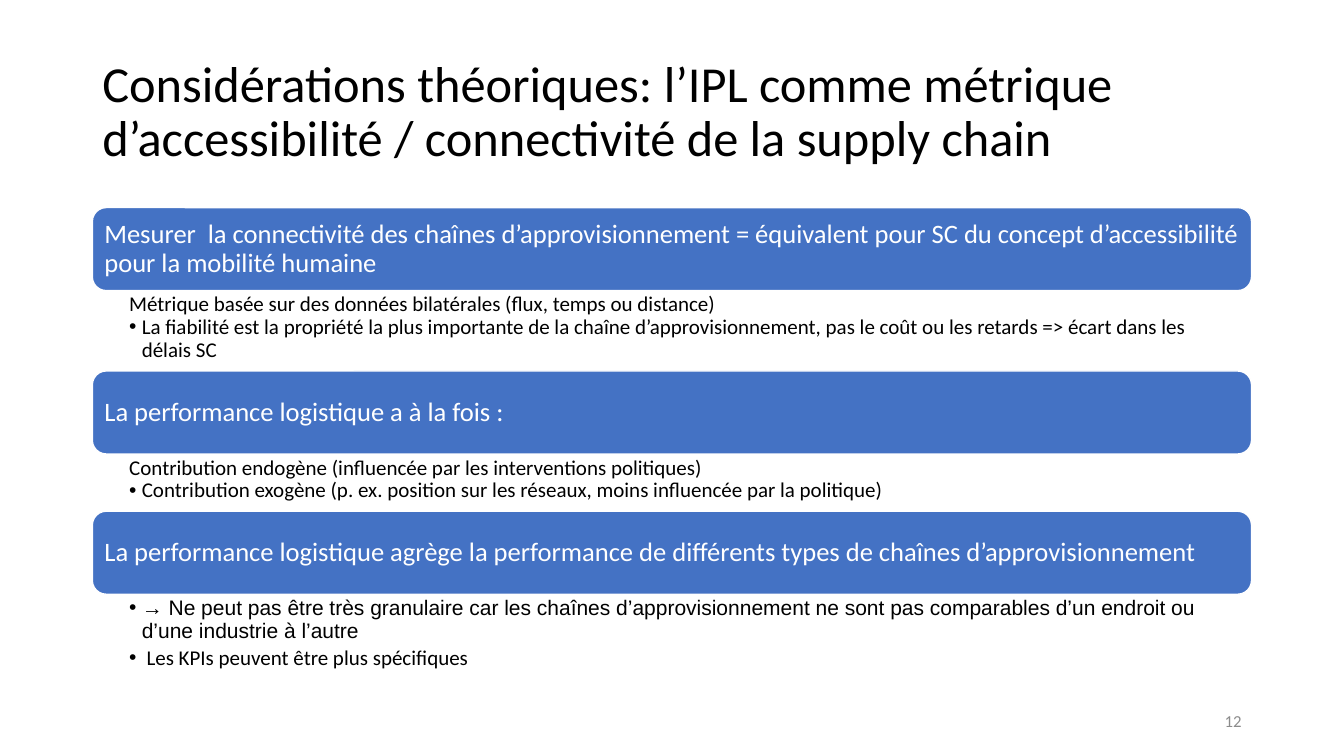
import pptx
import pptx.util
import pptx.dml.color
import pptx.enum.shapes
import pptx.enum.text
import pptx.oxml.ns
import lxml.etree

Pt = pptx.util.Pt
ALIGN = pptx.enum.text.PP_ALIGN
ANCHOR = pptx.enum.text.MSO_ANCHOR

# Content
TITLE = "Considérations théoriques: l’IPL comme métrique d’accessibilité / connectivité de la supply chain"
PAGE = "12"
# Each section: heading, body height, lines as (text, bulleted, space after, font)
SECTIONS = [
    ("Mesurer  la connectivité des chaînes d’approvisionnement = équivalent pour SC "
     "du concept d’accessibilité pour la mobilité humaine", 57.4, [
         ("Métrique basée sur des données bilatérales (flux, temps ou distance)", False, 0, "Calibri"),
         ("La fiabilité est la propriété la plus importante de la chaîne d’approvisionnement, "
          "pas le coût ou les retards => écart dans les délais SC", True, 3, "Calibri"),
     ]),
    ("La performance logistique a à la fois :", 40.9, [
        ("Contribution endogène (influencée par les interventions politiques)", False, 0, "Calibri"),
        ("Contribution exogène (p. ex. position sur les réseaux, moins influencée par la politique)",
         True, 3, "Calibri"),
    ]),
    ("La performance logistique agrège la performance de différents types de chaînes "
     "d’approvisionnement", 57.4, [
         ("→ Ne peut pas être très granulaire car les chaînes d’approvisionnement ne sont pas "
          "comparables d’un endroit ou d’une industrie à l’autre", True, 3, "Arial"),
         (" Les KPIs peuvent être plus spécifiques", True, 3, "Calibri"),
     ]),
]

COLORS = {"bar": "4472C4", "white": "FFFFFF", "text": "000000", "page": "8C8C8C"}

# Layout
LEFT, WIDTH = 66, 828
SECTIONS_TOP, BAR_H = 148.3, 59.3
HANGING = 9


def rgb(name):
    return pptx.dml.color.RGBColor.from_string(COLORS[name])


def set_frame(tf, insets=(7.2, 3.6, 7.2, 3.6), anchor=ANCHOR.MIDDLE):
    tf.word_wrap = True
    tf.vertical_anchor = anchor
    tf.margin_left, tf.margin_top, tf.margin_right, tf.margin_bottom = map(Pt, insets)


def write(p, text, size, color, font="Calibri", align=ALIGN.LEFT, spacing=0.9):
    p.text = text
    p.alignment = align
    p.line_spacing = spacing
    for r in p.runs:
        r.font.size = Pt(size)
        r.font.name = font
        r.font.color.rgb = rgb(color)


def add_bullet(p):
    pPr = p._p.get_or_add_pPr()
    pPr.set("marL", str(Pt(HANGING)))
    pPr.set("indent", str(-Pt(HANGING)))
    font = lxml.etree.SubElement(pPr, pptx.oxml.ns.qn("a:buFont"))
    font.set("typeface", "Arial")
    bullet = lxml.etree.SubElement(pPr, pptx.oxml.ns.qn("a:buChar"))
    bullet.set("char", "•")


def add_text(s, x, y, w, h):
    return s.shapes.add_textbox(Pt(x), Pt(y), Pt(w), Pt(h)).text_frame


def add_bar(s, y, heading):
    sp = s.shapes.add_shape(pptx.enum.shapes.MSO_SHAPE.ROUNDED_RECTANGLE,
                            Pt(LEFT), Pt(y), Pt(WIDTH), Pt(BAR_H))
    sp.shadow.inherit = False
    sp.fill.solid()
    sp.fill.fore_color.rgb = rgb("bar")
    sp.line.color.rgb = rgb("white")
    sp.line.width = Pt(1)
    set_frame(sp.text_frame, (5.7, 5.7, 5.7, 5.7))
    write(sp.text_frame.paragraphs[0], heading, 19, "white")


def add_body(s, y, h, lines):
    tf = add_text(s, LEFT, y, WIDTH, h)
    set_frame(tf, (26.3, 2.2, 10.8, 2.2), ANCHOR.TOP)
    for i, (text, bulleted, after, font) in enumerate(lines):
        p = tf.add_paragraph() if i else tf.paragraphs[0]
        write(p, text, 15, "text", font)
        p.space_after = Pt(after)
        if bulleted:
            add_bullet(p)


def main():
    prs = pptx.Presentation()
    prs.slide_width, prs.slide_height = Pt(960), Pt(540)
    s = prs.slides.add_slide(prs.slide_layouts[6])

    # Title
    tf = add_text(s, LEFT, 28.8, WIDTH, 104.4)
    set_frame(tf)
    write(tf.paragraphs[0], TITLE, 36, "text")

    # Stacked sections: bar, then its details
    y = SECTIONS_TOP
    for heading, body_h, lines in SECTIONS:
        add_bar(s, y, heading)
        add_body(s, y + BAR_H, body_h, lines)
        y += BAR_H + body_h

    # Slide number
    tf = add_text(s, 678, 500.4, 216, 28.8)
    set_frame(tf)
    write(tf.paragraphs[0], PAGE, 12, "page", align=ALIGN.RIGHT, spacing=1.0)

    prs.save("out.pptx")


if __name__ == "__main__":
    main()
